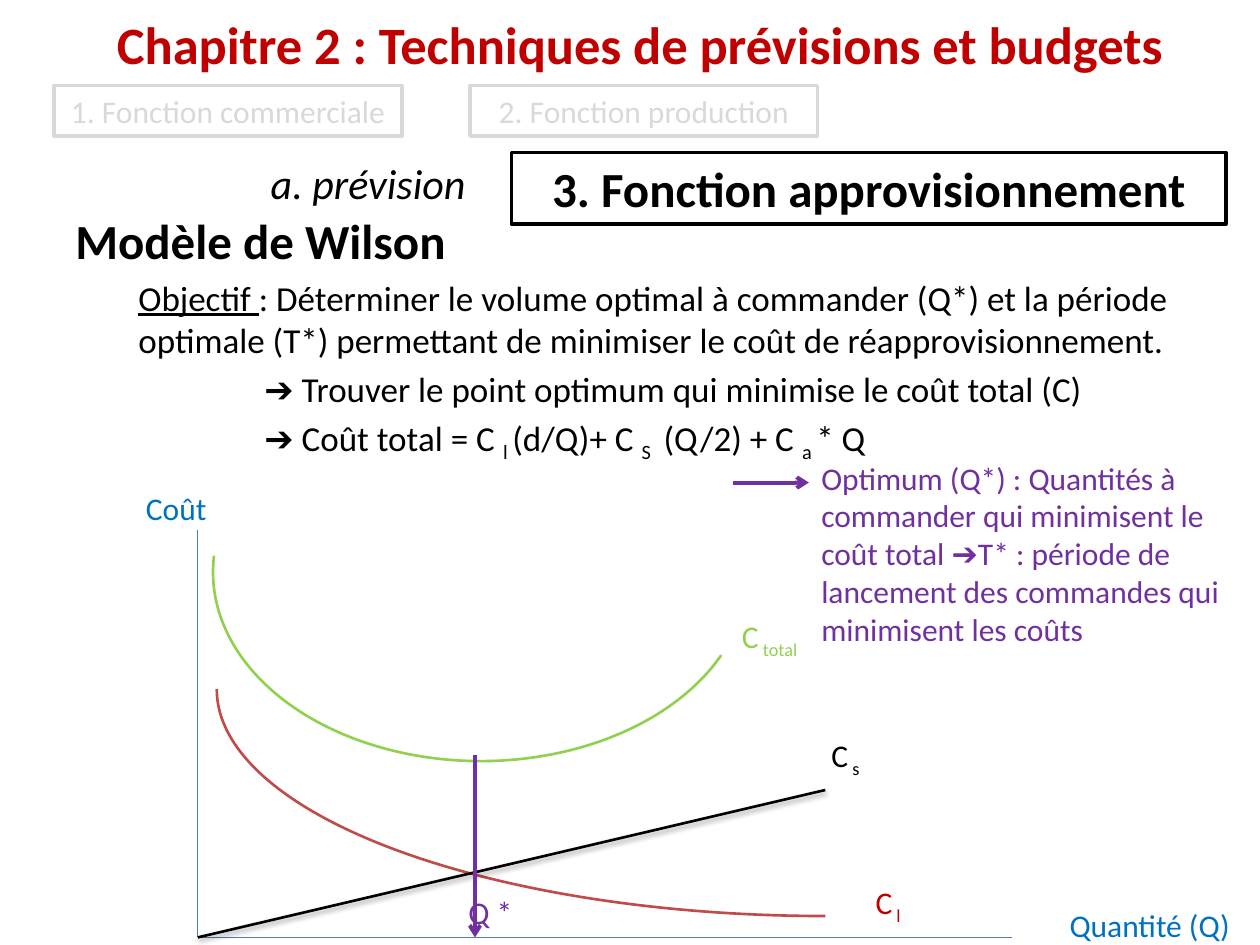
from lxml import etree
from pptx import Presentation
from pptx import util as u
from pptx.dml.color import RGBColor
from pptx.enum import shapes, text
from pptx.oxml.ns import qn

COLS = 100
BLACK, GREY, WHITE = "000000", "D9D9D9", "FFFFFF"
RED, BLUE, GREEN, PURPLE = "C00000", "0070C0", "92D050", "7030A0"
AXIS, BRICK = "4B7EBC", "BF4C48"


def color(code):
    return RGBColor.from_string(code)


def lower(run):
    run.font._element.set("baseline", "-25000")


def under(run):
    run.font.underline = True


class Board:
    """Draws on one slide; lengths are columns and rows of a 100 x 75 grid."""

    def __init__(self, deck):
        self.font = "Calibri"
        self.cell = deck.slide_width / COLS
        self.slide = deck.slides.add_slide(deck.slide_layouts[6])
        self.items = self.slide.shapes

    def grid(self, *cells):
        return [u.Emu(round(c * self.cell)) for c in cells]

    def fill(self, para, words, size, ink=BLACK, bold=False, italic=False, mark=lower):
        """Fill a paragraph; the parts between underscores get the mark."""
        for i, part in enumerate(words.split("_")):
            if not part:
                continue
            run = para.add_run()
            run.text = part
            font = run.font
            font.name, font.size = self.font, u.Pt(size)
            font.bold, font.italic = bold, italic
            font.color.rgb = color(ink)
            if i % 2:
                mark(run)

    def label(self, at, words, size=18, ink=BLACK, **style):
        frame = self.items.add_textbox(*self.grid(*at)).text_frame
        frame.word_wrap = True
        self.fill(frame.paragraphs[0], words, size, ink, **style)
        return frame

    def box(self, at, words, size, ink, bold=False):
        rect = self.items.add_shape(shapes.MSO_SHAPE.RECTANGLE, *self.grid(*at))
        rect.shadow.inherit = False
        rect.fill.solid()
        rect.fill.fore_color.rgb = color(WHITE)
        rect.line.color.rgb = color(ink)
        rect.line.width = u.Pt(2)
        frame = rect.text_frame
        frame.word_wrap = True
        frame.vertical_anchor = text.MSO_ANCHOR.TOP
        frame.paragraphs[0].alignment = text.PP_ALIGN.CENTER
        self.fill(frame.paragraphs[0], words, size, ink, bold)

    def arc(self, at, ink, turns=()):
        curve = self.items.add_shape(shapes.MSO_SHAPE.ARC, *self.grid(*at))
        curve.rotation = 180
        curve.shadow.inherit = False
        curve.fill.background()
        curve.line.color.rgb = color(ink)
        curve.line.width = u.Pt(1.5)
        for i, turn in enumerate(turns):
            curve.adjustments[i] = turn

    def line(self, start, end, ink, width, arrow=False, shade=False):
        kind = shapes.MSO_CONNECTOR.STRAIGHT
        link = self.items.add_connector(kind, *self.grid(*start, *end))
        link.line.color.rgb = color(ink)
        link.line.width = u.Pt(width)
        props = link._element.spPr
        if arrow:
            etree.SubElement(props.find(qn("a:ln")), qn("a:tailEnd"), type="arrow")
        effect = etree.SubElement(props, qn("a:effectLst"))
        if shade:
            shadow = etree.SubElement(effect, qn("a:outerShdw"), blurRad=str(u.Pt(3.1)),
                                      dist=str(u.Pt(1.6)), dir="5400000", rotWithShape="0")
            tint = etree.SubElement(shadow, qn("a:srgbClr"), val=BLACK)
            etree.SubElement(tint, qn("a:alpha"), val="38000")


def head(board):
    board.label((8.3, 0.5, 87.4, 6.1), "Chapitre 2 : Techniques de prévisions et budgets",
                30, RED, bold=True)
    board.box((40.6, 12.1, 56.7, 5.7), "3. Fonction approvisionnement", 28, BLACK, True)
    for left, words in ((4.3, "1. Fonction commerciale"), (37.3, "2. Fonction production")):
        board.box((left, 6.8, 27.6, 4), words, 18, GREY)
    board.label((20.5, 12, 20.1, 5), "a. prévision", 24, italic=True)


def body(board):
    frame = board.label((5, 16.2, 90, 49.5), "Modèle de Wilson", 28, bold=True)
    points = (
        (0.5, "_Objectif _: Déterminer le volume optimal à commander (Q*) et la période "
              "optimale (T*) permettant de minimiser le coût de réapprovisionnement.", under),
        (1.5, "➔ Trouver le point optimum qui minimise le coût total (C)", lower),
        (1.5, "➔ Coût total = C _l _(d/Q)+ C _S _ (Q/2) + C _a _* Q", lower),
    )
    for indent, words, mark in points:
        para = frame.add_paragraph()
        para.space_before = u.Pt(4)
        para._p.get_or_add_pPr().set("marL", str(u.Inches(indent)))
        board.fill(para, words, 20, mark=mark)


def graph(board):
    zero = (15.7, 74.4)
    for end in ((15.7, 42.1), (80.3, 74.4)):
        board.line(zero, end, AXIS, 0.75)
    board.arc((17.2, 36.7, 96.6, 36), BRICK)
    board.line(zero, (65.5, 62.7), BLACK, 1.5, shade=True)
    board.arc((16.9, 30.4, 42.5, 30), GREEN, (119.44, 2.11))
    labels = (
        (68.5, 69.6, 25.2, "C_ l", RED),
        (10.6, 38.3, 11, "Coût", BLUE),
        (36.2, 70.4, 17.3, "Q *", PURPLE),
        (65, 57.9, 25.2, "C_ s", BLACK),
        (57.9, 48.5, 25.2, "C_ total", GREEN),
        (83.9, 71.4, 17.3, "Quantité (Q)", BLUE),
    )
    for left, top, width, words, ink in labels:
        board.label((left, top, width, 4), words, ink=ink)
    board.line((37.7, 59.9), (37.7, 74.4), PURPLE, 2.25, arrow=True)
    board.line((58.2, 38.3), (64.2, 38.3), PURPLE, 2.25, arrow=True)
    board.label((64.2, 35.9, 34.6, 16.2),
                "Optimum (Q*) : Quantités à commander qui minimisent le coût total "
                "➔T* : période de lancement des commandes qui minimisent les coûts",
                ink=PURPLE)


def main():
    deck = Presentation()
    deck.slide_width, deck.slide_height = u.Inches(10), u.Inches(7.5)
    board = Board(deck)
    head(board)
    body(board)
    graph(board)
    deck.save("out.pptx")


if __name__ == "__main__":
    main()
